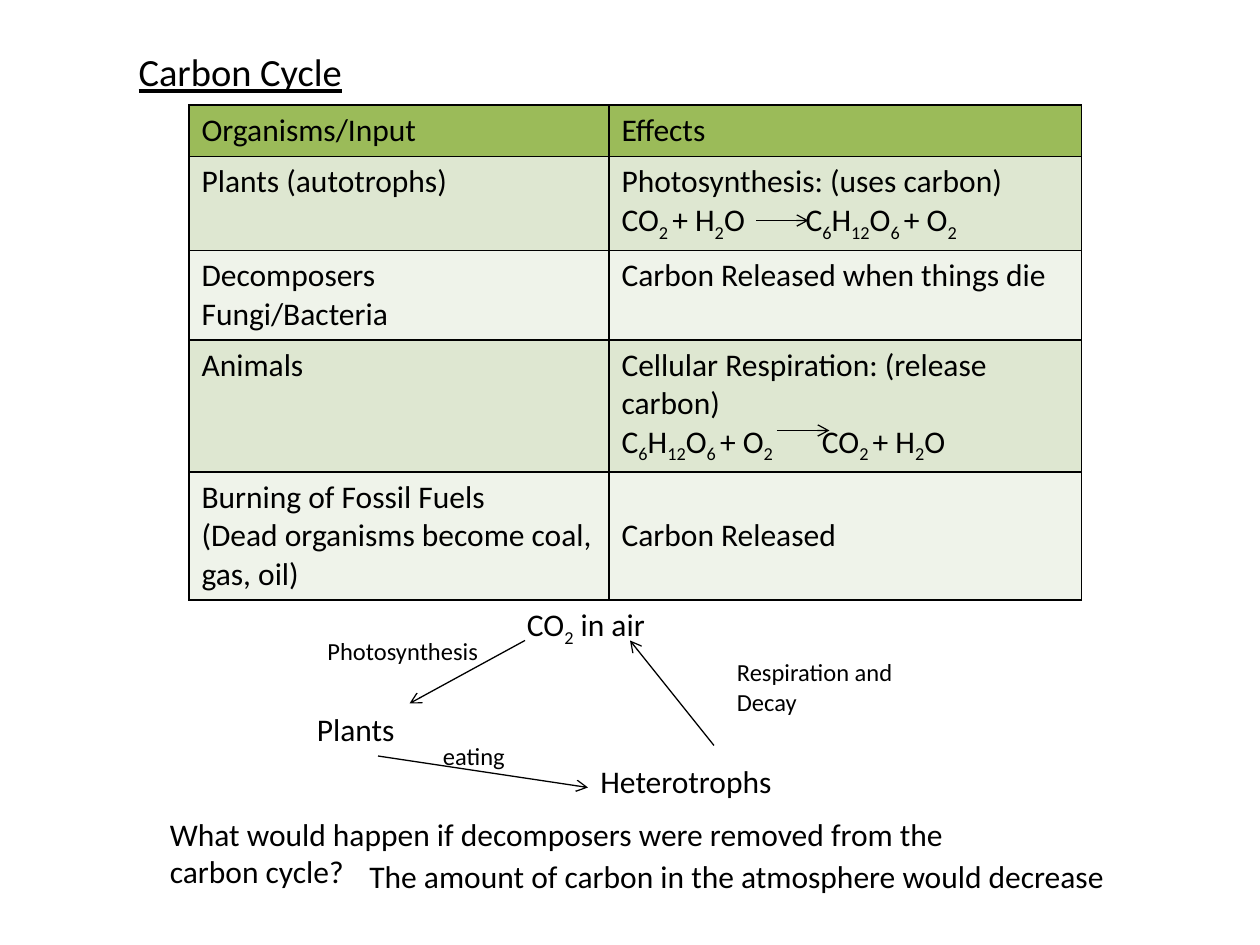
from lxml import etree
from pptx import Presentation
from pptx.dml.color import RGBColor
from pptx.enum.shapes import MSO_CONNECTOR
from pptx.enum.text import MSO_ANCHOR, MSO_AUTO_SIZE, PP_ALIGN
from pptx.oxml.ns import qn
from pptx.util import Inches, Pt

LINE = MSO_CONNECTOR.STRAIGHT
TOP, MIDDLE = MSO_ANCHOR.TOP, MSO_ANCHOR.MIDDLE
GROW, FIXED = MSO_AUTO_SIZE.SHAPE_TO_FIT_TEXT, MSO_AUTO_SIZE.NONE
LEFT = PP_ALIGN.LEFT
TITLE_ONLY = 5
INK, HEAD, BANDS = "000000", "9BBB59", ("DEE7D1", "EFF3EA")


def rgb(value):
    """Turn a hex string into a colour."""
    return RGBColor.from_string(value)


def unit(n):
    """Convert grid units, twelve to the inch, to a length."""
    return Inches(n / 12)


def write(tf, text, size=18, color=INK, underline=None, tab=None):
    """Write lines of text, with ~ switching subscript on and off."""
    for i, line in enumerate(text.split("\n")):
        p = tf.paragraphs[0] if i == 0 else tf.add_paragraph()
        p.alignment = LEFT
        if tab and "\t" in line:
            tabs = etree.SubElement(p._p.get_or_add_pPr(), qn("a:tabLst"))
            etree.SubElement(tabs, qn("a:tab"), pos=str(Inches(tab)), algn="l")
        for j, part in enumerate(line.split("~")):
            if not part:
                continue
            r = p.add_run()
            r.text = part
            r.font.name, r.font.size = "Calibri", Pt(size)
            r.font.bold, r.font.underline = False, underline
            r.font.color.rgb = rgb(color)
            if j % 2:
                r._r.get_or_add_rPr().set("baseline", "-25000")


class Sketch:
    """Holds the slide and draws styled elements on its grid."""

    def __init__(self, s):
        """Keep the slide."""
        self.s = s

    def title(self, text, x, y, w, h):
        """Place and format the title placeholder."""
        sp = self.s.shapes.title
        sp.left, sp.top, sp.width, sp.height = map(unit, (x, y, w, h))
        tf = sp.text_frame
        tf.auto_size, tf.vertical_anchor = FIXED, TOP
        write(tf, text, size=22, underline=True)

    def label(self, text, x, y, w, h, size=18):
        """Add a wrapped text box."""
        tf = self.s.shapes.add_textbox(*map(unit, (x, y, w, h))).text_frame
        tf.word_wrap, tf.auto_size = True, GROW
        write(tf, text, size=size)

    def arrow(self, *ends):
        """Add a thin arrow between two grid points."""
        c = self.s.shapes.add_connector(LINE, *map(unit, ends))
        c.line.color.rgb, c.line.width = rgb(INK), Pt(0.75)
        ln = c.line._get_or_add_ln()
        etree.SubElement(ln, qn("a:tailEnd"), type="arrow")
        etree.SubElement(c._element.spPr, qn("a:effectLst"))

    def border(self, cell):
        """Outline a cell on all four sides."""
        tc_pr = cell._tc.get_or_add_tcPr()
        for side in ("lnL", "lnR", "lnT", "lnB"):
            ln = etree.SubElement(tc_pr, qn("a:" + side), w=str(Pt(1)))
            fill = etree.SubElement(ln, qn("a:solidFill"))
            etree.SubElement(fill, qn("a:srgbClr"), val=INK)

    def table(self, rows, x, y, widths, heights):
        """Add a bordered table with a header and banded rows."""
        frame = self.s.shapes.add_table(
            len(rows), len(widths), unit(x), unit(y),
            unit(sum(widths)), unit(sum(heights)))
        t = frame.table
        t.first_row = t.horz_banding = False
        for col, w in zip(t.columns, widths):
            col.width = unit(w)
        for i, (row, h) in enumerate(zip(rows, heights)):
            t.rows[i].height = unit(h)
            for j, text in enumerate(row[:2]):
                cell = t.cell(i, j)
                self.border(cell)
                cell.fill.solid()
                cell.fill.fore_color.rgb = rgb(BANDS[(i - 1) % 2] if i else HEAD)
                write(cell.text_frame, text, tab=row[2] if len(row) > 2 else None)
        t.cell(len(rows) - 1, 1).vertical_anchor = MIDDLE


ROWS = [
    ("Organisms/Input", "Effects"),
    ("Plants (autotrophs)",
     "Photosynthesis: (uses carbon)\n"
     "CO~2 ~+ H~2~O\tC~6~H~12~O~6 ~+ O~2", 1.46),
    ("Decomposers\nFungi/Bacteria", "Carbon Released when things die"),
    ("Animals",
     "Cellular Respiration: (release carbon)\n"
     "C~6~H~12~O~6 ~+ O~2~\tCO~2 ~+ H~2~O", 1.59),
    ("Burning of Fossil Fuels\n(Dead organisms become coal, gas, oil)",
     "Carbon Released"),
]
LABELS = [
    ("CO~2~ in air", 49, 57, 16, 4.8, 18),
    ("Photosynthesis", 30, 60, 20, 4, 14),
    ("Plants", 29, 67, 18, 4.8, 18),
    ("eating", 41, 70, 20, 4, 14),
    ("Heterotrophs", 56, 72, 21, 4.8, 18),
    ("Respiration and Decay", 69, 62, 22, 6.8, 14),
    ("What would happen if decomposers were removed from the carbon cycle?",
     15, 77, 84, 8.5, 18),
    ("The amount of carbon in the atmosphere would decrease",
     34, 81, 79, 4.8, 18),
]
ARROWS = [
    (72, 21, 77, 21),
    (74, 41, 79, 41),
    (50, 61, 39, 67),
    (36, 72, 56, 75),
    (68, 71, 60, 61),
]


def main():
    """Build and save the slide."""
    prs = Presentation()
    prs.slide_width, prs.slide_height = Inches(10), Inches(7.5)
    sketch = Sketch(prs.slides.add_slide(prs.slide_layouts[TITLE_ONLY]))
    sketch.table(ROWS, 18, 10, (40, 45), (4.9, 8.9, 8.5, 12.5, 12.2))
    sketch.title("Carbon Cycle", 12, 4, 50, 5.6)
    for label in LABELS:
        sketch.label(*label)
    for arrow in ARROWS:
        sketch.arrow(*arrow)
    prs.save("out.pptx")


if __name__ == "__main__":
    main()
